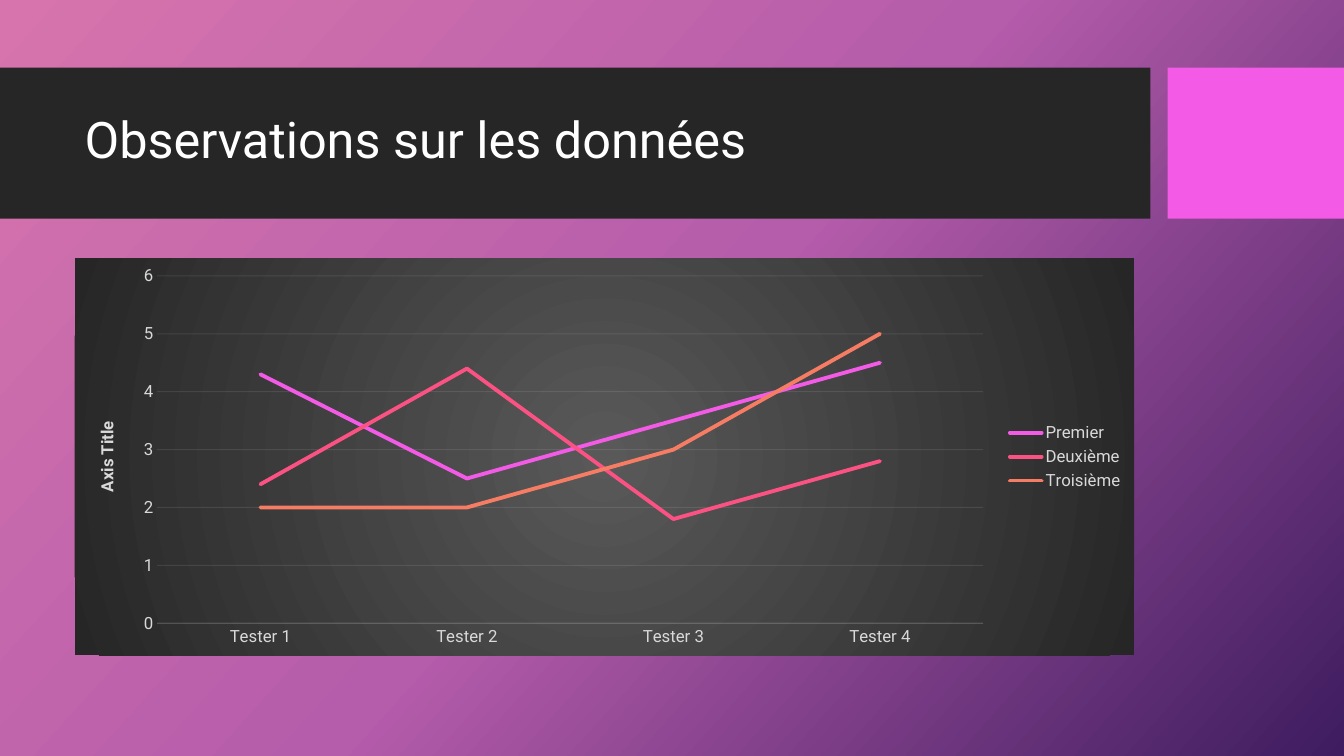
from lxml import etree
from pptx import Presentation
from pptx.chart.data import CategoryChartData
from pptx.dml.color import RGBColor
from pptx.enum import chart as charts, shapes, text
from pptx.oxml import parse_xml
from pptx.oxml.ns import nsdecls, qn
from pptx.util import Inches, Pt

FONT = "Roboto"
COLORS = {
    "band": "262626", "accent": "F35AE6", "white": "FFFFFF",
    "label": "D9D9D9", "grid": "F2F2F2",
}
BACKGROUND_STOPS = [(0, "D774AD"), (50, "B55CAB"), (100, "3E1C5F")]
CHART_STOPS = [(0, "595959"), (100, "262626")]
LINEAR = '<a:lin ang="2520000" scaled="0"/>'
CIRCLE = '<a:path path="circle"><a:fillToRect l="50000" t="50000" r="50000" b="50000"/></a:path>'

TITLE = "Observations sur les données"
AXIS_TITLE = "Axis Title"
CATEGORIES = ["Tester 1", "Tester 2", "Tester 3", "Tester 4"]
SERIES = [
    ("Premier", (4.3, 2.5, 3.5, 4.5), "F35AE6"),
    ("Deuxième", (2.4, 4.4, 1.8, 2.8), "FC5283"),
    ("Troisième", (2, 2, 3, 5), "F67C64"),
]
BANDS = [(0, 11.41, "band"), (11.58, 1.75, "accent")]
BAND_TOP, BAND_HEIGHT = 0.67, 1.5
CONTENT_LEFT, CONTENT_WIDTH = 0.74, 10.51


def rgb(name):
    return RGBColor.from_string(COLORS[name])


def gradient(stops, direction):
    marks = "".join(
        f'<a:gs pos="{position * 1000}"><a:srgbClr val="{color}"/></a:gs>'
        for position, color in stops)
    return parse_xml(f'<a:gradFill {nsdecls("a")} rotWithShape="1">'
                     f'<a:gsLst>{marks}</a:gsLst>{direction}</a:gradFill>')


def format_font(font, size, color, bold=False):
    font.name, font.size, font.bold = FONT, Pt(size), bold
    font.color.rgb = rgb(color)


def write(frame, content, size, color, bold=False):
    frame.text = content
    format_font(frame.paragraphs[0].runs[0].font, size, color, bold)


def paint_background(slide):
    slide.background.fill.solid()
    properties = slide.element.find(".//" + qn("p:bgPr"))
    properties.replace(properties[0], gradient(BACKGROUND_STOPS, LINEAR))


def add_band(slide, left, width, color):
    band = slide.shapes.add_shape(
        shapes.MSO_SHAPE.RECTANGLE, Inches(left), Inches(BAND_TOP),
        Inches(width), Inches(BAND_HEIGHT))
    band.shadow.inherit = False
    band.fill.solid()
    band.fill.fore_color.rgb = rgb(color)
    band.line.fill.background()


def place_title(slide):
    title = slide.shapes.title
    title.left, title.top = Inches(CONTENT_LEFT), Inches(0.82)
    title.width, title.height = Inches(CONTENT_WIDTH), Inches(1.18)
    frame = title.text_frame
    frame.word_wrap = True
    frame.vertical_anchor = text.MSO_ANCHOR.MIDDLE
    write(frame, TITLE, 36, "white")
    frame.paragraphs[0].alignment = text.PP_ALIGN.LEFT
    frame.paragraphs[0].line_spacing = 0.9
    # The title belongs above the bands.
    slide.shapes.element.append(title.element)


def format_axes(chart):
    category_axis, value_axis = chart.category_axis, chart.value_axis
    for axis in (category_axis, value_axis):
        axis.major_tick_mark = axis.minor_tick_mark = charts.XL_TICK_MARK.NONE
        format_font(axis.tick_labels.font, 12, "label")
    category_axis.has_title = False
    value_axis.minimum_scale, value_axis.maximum_scale = 0, 6
    value_axis.major_unit = 1
    value_axis.format.line.fill.background()
    value_axis.has_major_gridlines = True
    for line in (category_axis.format.line, value_axis.major_gridlines.format.line):
        line.width = Pt(0.75)
        line.color.rgb = rgb("grid")
    for color in chart.element.iter(qn("a:srgbClr")):
        if color.get("val") == COLORS["grid"]:
            etree.SubElement(color, qn("a:alpha"), val="10000")

    write(value_axis.axis_title.text_frame, AXIS_TITLE, 12, "label", bold=True)
    body = chart.element.find(".//" + qn("c:title") + "//" + qn("a:bodyPr"))
    body.set("rot", "-5400000")
    body.set("vert", "horz")


def add_line_chart(slide):
    data = CategoryChartData()
    data.categories = CATEGORIES
    for name, values, _ in SERIES:
        data.add_series(name, values)
    chart = slide.shapes.add_chart(
        charts.XL_CHART_TYPE.LINE, Inches(CONTENT_LEFT), Inches(2.56),
        Inches(CONTENT_WIDTH), Inches(3.94), data).chart
    chart.has_title = False
    format_font(chart.font, 10, "white")
    area = parse_xml(f'<c:spPr {nsdecls("c", "a")}><a:ln><a:noFill/></a:ln></c:spPr>')
    area.insert(0, gradient(CHART_STOPS, CIRCLE))
    chart.element.find(qn("c:txPr")).addprevious(area)

    chart.has_legend = True
    chart.legend.position = charts.XL_LEGEND_POSITION.RIGHT
    chart.legend.include_in_layout = False
    format_font(chart.legend.font, 12, "label")
    format_axes(chart)

    plot = chart.plots[0]
    plot.vary_by_categories = False
    for series, (_, _, color) in zip(plot.series, SERIES):
        series.smooth = False
        series.marker.style = charts.XL_MARKER_STYLE.NONE
        series.format.line.width = Pt(2.75)
        series.format.line.color.rgb = RGBColor.from_string(color)
    for line in chart.element.iterfind(".//" + qn("c:ser") + "/" + qn("c:spPr") + "/" + qn("a:ln")):
        line.set("cap", "rnd")


def main():
    presentation = Presentation()
    presentation.slide_width, presentation.slide_height = Inches(13.33), Inches(7.5)
    slide = presentation.slides.add_slide(presentation.slide_layouts[5])
    paint_background(slide)
    for left, width, color in BANDS:
        add_band(slide, left, width, color)
    place_title(slide)
    add_line_chart(slide)
    presentation.save("out.pptx")


if __name__ == "__main__":
    main()
